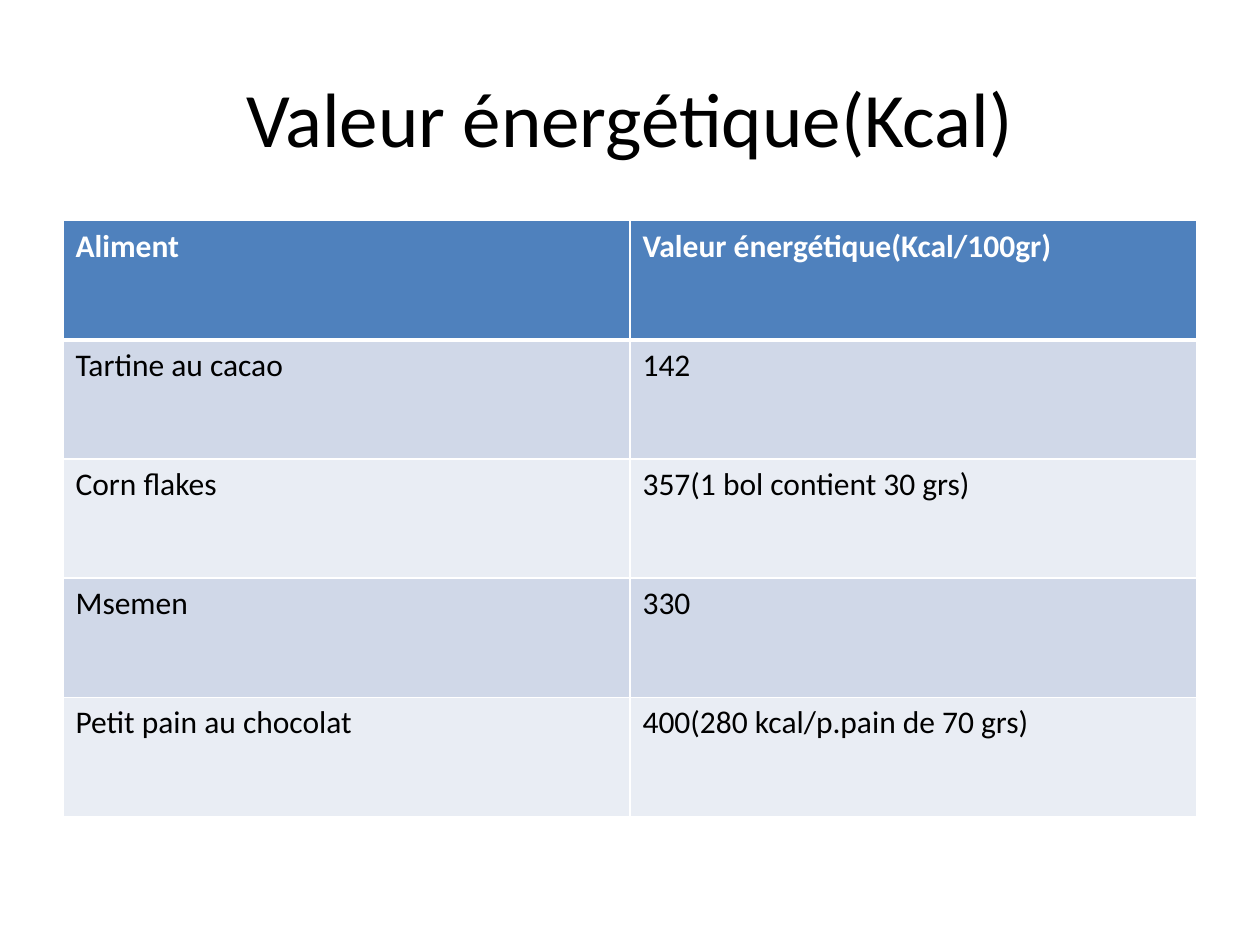
from lxml.etree import SubElement as Sub
from pptx import Presentation
from pptx.dml.color import RGBColor
from pptx.enum.text import MSO_ANCHOR as Anchor, PP_ALIGN as Align
from pptx.oxml.ns import qn
from pptx.util import Cm, Pt

FONT = "Calibri"
WHITE, BLACK, BLUE = "FFFFFF", "000000", "4F81BD"
BANDS = ("D0D8E8", "E9EDF4")
ROWS = [
    ("Aliment", "Valeur énergétique(Kcal/100gr)"),
    ("Tartine au cacao", "142"),
    ("Corn flakes", "357(1 bol contient 30 grs)"),
    ("Msemen", "330"),
    ("Petit pain au chocolat", "400(280 kcal/p.pain de 70 grs)"),
]


def color(code):
    return RGBColor.from_string(code)


def style(frame, size, code, bold=False):
    for para in frame.paragraphs:
        for run in para.runs:
            font = run.font
            font.name, font.size, font.bold = FONT, Pt(size), bold
            font.color.rgb = color(code)


def border(cell, side, width):
    line = Sub(cell._tc.get_or_add_tcPr(), qn(f"a:ln{side}"), w=str(Pt(width)))
    fill = Sub(line, qn("a:solidFill"))
    Sub(fill, qn("a:srgbClr"), val=WHITE)


def add_title(slide, text, left, top, width, height):
    title = slide.shapes.title
    title.left, title.top = Cm(left), Cm(top)
    title.width, title.height = Cm(width), Cm(height)
    frame = title.text_frame
    frame.text = text
    frame.vertical_anchor = Anchor.MIDDLE
    frame.paragraphs[0].alignment = Align.CENTER
    style(frame, 44, BLACK)


def add_grid(slide, rows, left, top, width, height):
    table = slide.shapes.add_table(
        len(rows), len(rows[0]), Cm(left), Cm(top), Cm(width), Cm(height)
    ).table
    for r, row in enumerate(rows):
        head = r == 0
        for c, text in enumerate(row):
            cell = table.cell(r, c)
            # Borders come before the fill in the cell properties
            for side in "LRTB":
                thick = (side == "B" and head) or (side == "T" and r == 1)
                border(cell, side, 3 if thick else 1)
            cell.fill.solid()
            cell.fill.fore_color.rgb = color(BLUE if head else BANDS[(r - 1) % 2])
            cell.text_frame.text = text
            style(cell.text_frame, 18, WHITE if head else BLACK, head)


def main():
    deck = Presentation()
    deck.slide_width, deck.slide_height = Cm(25.4), Cm(19.05)
    slide = deck.slides.add_slide(deck.slide_layouts[5])

    # Heading
    add_title(slide, "Valeur énergétique(Kcal)", 1.27, 0.76, 22.86, 3.18)
    # Energy table
    add_grid(slide, ROWS, 1.27, 4.45, 22.86, 12.01)

    deck.save("out.pptx")


if __name__ == "__main__":
    main()
